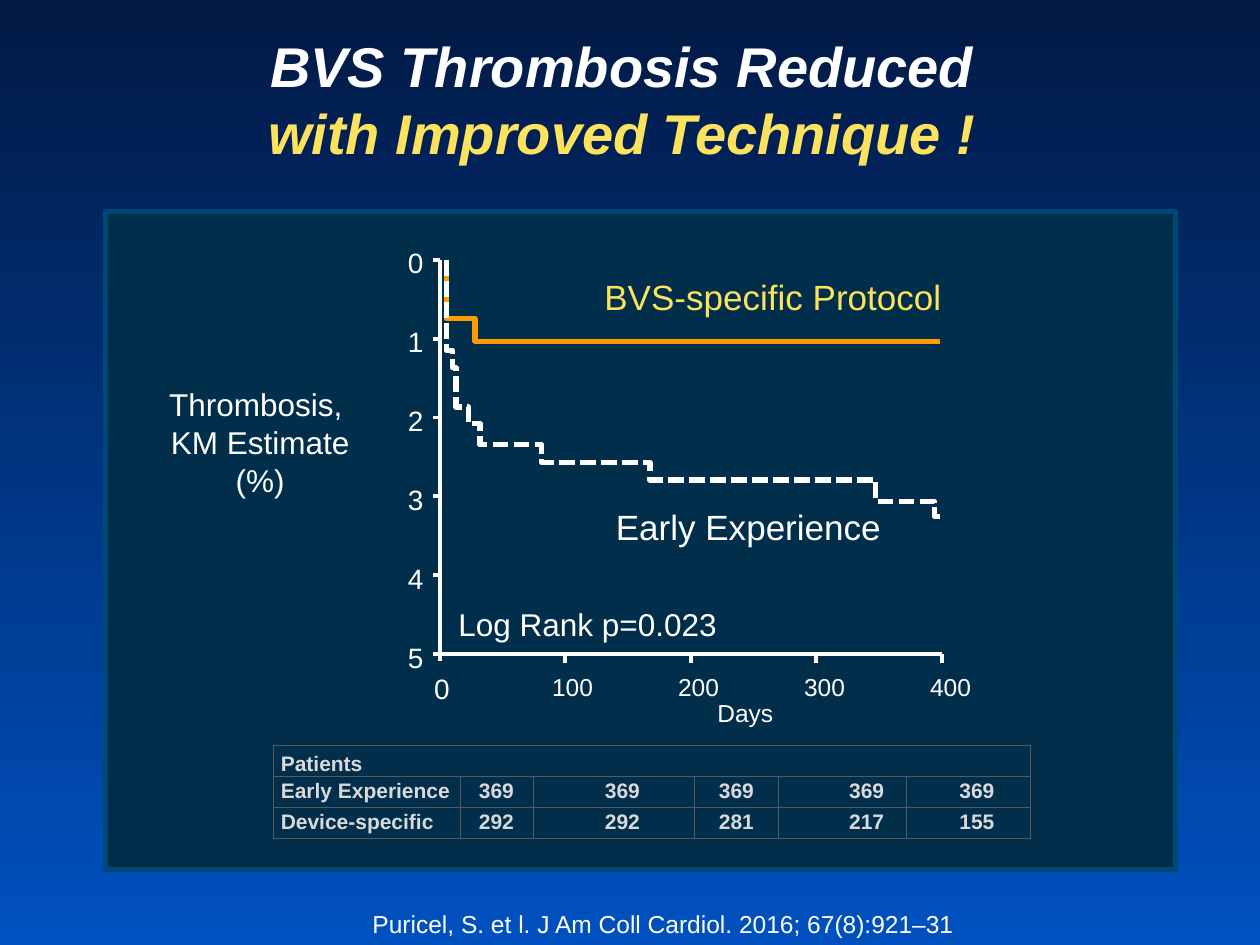
from typing import NamedTuple

from lxml.etree import SubElement
from pptx import Presentation
from pptx.dml.color import RGBColor
from pptx.enum.dml import MSO_LINE
from pptx.enum.shapes import MSO_CONNECTOR, MSO_SHAPE
from pptx.enum.text import MSO_ANCHOR, PP_ALIGN
from pptx.oxml import parse_xml
from pptx.oxml.ns import nsdecls, qn
from pptx.util import Pt

WHITE, YELLOW, ORANGE, GREY = "FFFFFF", "FDE25E", "FE9B03", "D9D9D9"
LEFT, CENTER, RIGHT = PP_ALIGN.LEFT, PP_ALIGN.CENTER, PP_ALIGN.RIGHT
AXIS_X, AXIS_Y, TOP = 251.3, 373.7, 148.5
X_STEP, Y_STEP = 71.7, 45.04
TICK = 4


class Label(NamedTuple):
    text: str
    x: float
    y: float
    w: float
    h: float
    size: float
    align: PP_ALIGN = CENTER
    color: str = WHITE
    inset: float = 7.2


class Curve(NamedTuple):
    x: float
    y: float
    steps: list[tuple[float, float]]
    color: str
    dashed: bool = False


class Column(NamedTuple):
    width: float
    early: str
    specific: str
    align: PP_ALIGN = CENTER
    indent: float = 0


LABELS = [
    Label("Thrombosis, \vKM Estimate\n(%)", 71.3, 216.7, 154.8, 72.7, 18),
    Label("Days", 394.6, 395.3, 62.6, 24.5, 14),
    Label("Log Rank p=0.023", 254.9, 342, 237.6, 28.8, 18, LEFT),
    Label("BVS-specific Protocol", 304.6, 154.1, 240.5, 31.7, 20, RIGHT, YELLOW),
    Label("Early Experience", 270, 285.1, 240.5, 31.7, 20, RIGHT),
    Label("0", 242.8, 380.2, 19.4, 24.5, 16, inset=3.6),
    Label("Puricel, S. et l. J Am Coll Cardiol. 2016; 67(8):921–31",
          157, 516.2, 444.2, 24.5, 14),
]

CURVES = [
    Curve(255, 149, [(182, 271.5), (195, 537)], ORANGE),
    Curve(255, 148.5, [
        (200.2, 258.5), (210.2, 260.6), (232.6, 267.8), (241.9, 274.3),
        (254.2, 309.6), (264.2, 371.5), (274.3, 500.4), (286.6, 534.2),
        (295.2, 537.1)], WHITE, True),
]

COLUMNS = [
    Column(106.6, "Early Experience", "Device-specific", LEFT),
    Column(41.8, "369", "292"),
    Column(92.2, "369", "292", indent=10),
    Column(48.2, "369", "281"),
    Column(72.7, "369", "217", LEFT, 36),
    Column(71.3, "369", "155", indent=10),
]


def rgb(value: str) -> RGBColor:
    return RGBColor.from_string(value)


def set_font(p, size: float, color: str) -> None:
    p.font.name = "Arial"
    p.font.size = Pt(size)
    p.font.color.rgb = rgb(color)


def add_label(s, label: Label) -> None:
    tf = s.shapes.add_textbox(Pt(label.x), Pt(label.y), Pt(label.w), Pt(label.h)).text_frame
    tf.word_wrap = True
    tf.margin_left = tf.margin_right = Pt(label.inset)
    tf.text = label.text
    for p in tf.paragraphs:
        p.alignment = label.align
        set_font(p, label.size, label.color)


def add_line(s, x1: float, y1: float, x2: float, y2: float) -> None:
    line = s.shapes.add_connector(MSO_CONNECTOR.STRAIGHT, Pt(x1), Pt(y1), Pt(x2), Pt(y2))
    line.line.color.rgb = rgb(WHITE)
    line.line.width = Pt(2.25)
    SubElement(line._element.spPr, qn("a:effectLst"))


def add_curve(s, curve: Curve) -> None:
    points, x = [], curve.x
    for y, next_x in curve.steps:
        points += [(Pt(x), Pt(y)), (Pt(next_x), Pt(y))]
        x = next_x
    builder = s.shapes.build_freeform(Pt(curve.x), Pt(curve.y))
    builder.add_line_segments(points, close=False)
    sp = builder.convert_to_shape()
    sp.shadow.inherit = False
    sp.fill.background()
    sp.line.color.rgb = rgb(curve.color)
    sp.line.width = Pt(3)
    if curve.dashed:
        sp.line.dash_style = MSO_LINE.SQUARE_DOT


def add_title(s) -> None:
    sp = s.shapes.title
    sp.left, sp.top, sp.width, sp.height = Pt(0), Pt(14.4), Pt(720), Pt(63.4)
    tf = sp.text_frame
    tf.vertical_anchor = MSO_ANCHOR.TOP
    tf.text = "BVS Thrombosis Reduced \nwith Improved Technique ! "
    for p, color in zip(tf.paragraphs, (WHITE, YELLOW)):
        p.alignment = CENTER
        p.line_spacing = 1.0
        p.space_before = Pt(0)
        set_font(p, 32, color)
        p.font.bold = p.font.italic = True


def add_panel(s) -> None:
    sp = s.shapes.add_shape(MSO_SHAPE.RECTANGLE, Pt(60.5), Pt(121), Pt(611.3), Pt(375.8))
    sp.shadow.inherit = False
    sp.fill.solid()
    sp.fill.fore_color.rgb = rgb("002E4B")
    sp.line.color.rgb = rgb("004976")
    sp.line.width = Pt(3)


def add_axes(s) -> None:
    add_line(s, AXIS_X - TICK, AXIS_Y, AXIS_X + 4 * X_STEP, AXIS_Y)
    add_line(s, AXIS_X, TOP, AXIS_X, AXIS_Y + TICK)
    for i in range(5):
        y = TOP + i * Y_STEP
        add_line(s, AXIS_X - TICK, y, AXIS_X, y)
    for i in range(6):
        add_label(s, Label(str(i), 226.1, 136.8 + i * 45.1, 19.4, 24.5, 16, RIGHT, inset=3.6))
    for i in range(1, 5):
        x = AXIS_X + i * X_STEP
        add_line(s, x, AXIS_Y, x, AXIS_Y + 5)
        add_label(s, Label(str(i * 100), 302 + (i - 1) * 72, 380.2, 50.4, 21.6, 14))


def format_cell(cell, text: str, column: Column, anchor: MSO_ANCHOR) -> None:
    cell.text = text
    cell.margin_left, cell.margin_right = Pt(4.3 + column.indent), Pt(4.3)
    cell.margin_top = cell.margin_bottom = Pt(0)
    cell.vertical_anchor = anchor
    p = cell.text_frame.paragraphs[0]
    p.alignment = column.align
    set_font(p, 12, GREY)
    p.font.bold = True
    tcPr = cell._tc.get_or_add_tcPr()
    for side in "LRTB":
        tcPr.append(parse_xml(
            f'<a:ln{side} {nsdecls("a")} w="{Pt(0.25)}"><a:solidFill>'
            f'<a:srgbClr val="595959"/></a:solidFill></a:ln{side}>'))
    cell.fill.background()


def add_patients(s) -> None:
    table = s.shapes.add_table(3, len(COLUMNS), Pt(156.2), Pt(426), Pt(432.8), Pt(52.8)).table
    table.first_row = table.horz_banding = False
    for row in table.rows:
        row.height = Pt(17.6)
    for i, column in enumerate(COLUMNS):
        table.columns[i].width = Pt(column.width)
        header = "" if i else "Patients"
        format_cell(table.cell(0, i), header, column, MSO_ANCHOR.BOTTOM)
        for row, text in enumerate((column.early, column.specific), 1):
            format_cell(table.cell(row, i), text, column, MSO_ANCHOR.MIDDLE)
    table.cell(0, 0).merge(table.cell(0, len(COLUMNS) - 1))


def main() -> None:
    prs = Presentation()
    prs.slide_width, prs.slide_height = Pt(720), Pt(540)
    s = prs.slides.add_slide(prs.slide_layouts[5])
    fill = s.background.fill
    fill.gradient()
    fill.gradient_angle = 270
    for stop, color, position in zip(fill.gradient_stops, ("011944", "0051BF"), (0, 1)):
        stop.color.rgb = rgb(color)
        stop.position = position
    add_panel(s)
    add_title(s)
    add_patients(s)
    for curve in CURVES:
        add_curve(s, curve)
    add_axes(s)
    for label in LABELS:
        add_label(s, label)
    prs.save("out.pptx")


if __name__ == "__main__":
    main()
